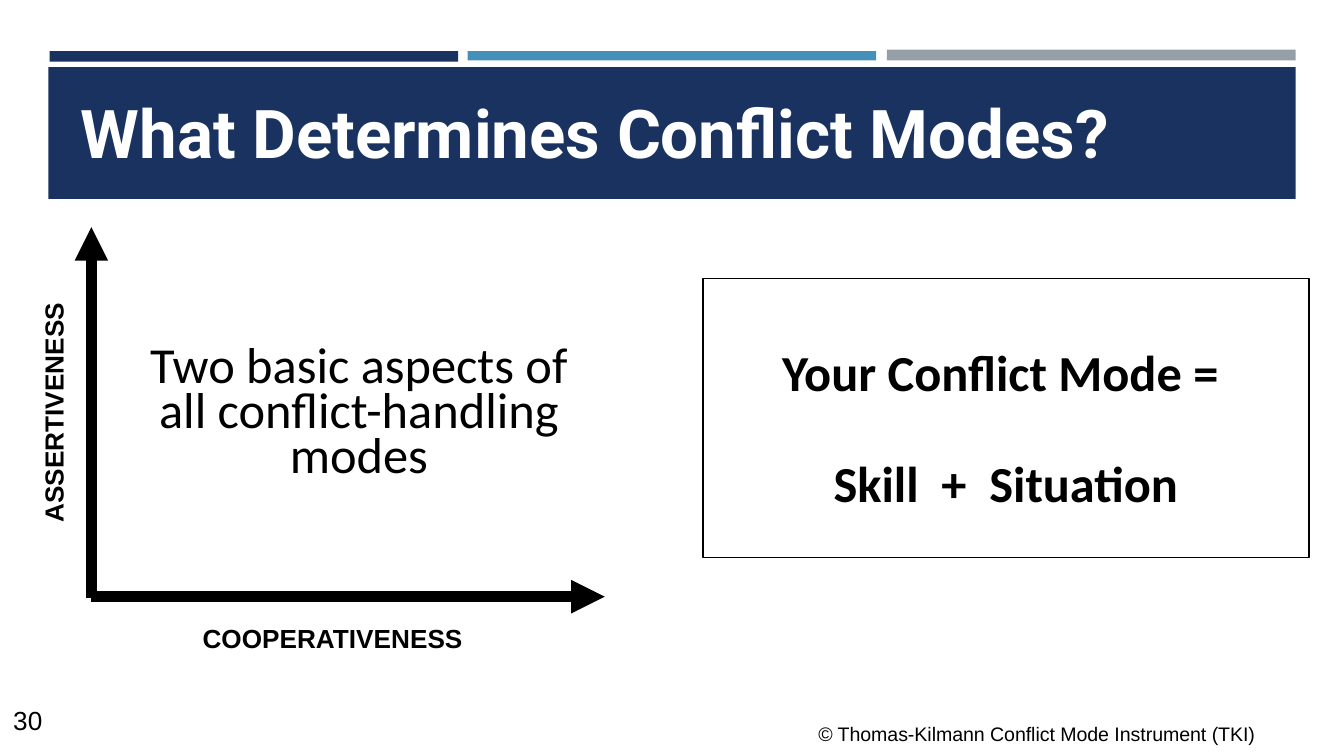
"""Build the slide on what determines conflict modes."""
from lxml.etree import SubElement
from pptx import Presentation
from pptx.dml.color import RGBColor
from pptx.enum.shapes import MSO_CONNECTOR, MSO_SHAPE
from pptx.enum.text import MSO_ANCHOR, MSO_AUTO_SIZE, PP_ALIGN
from pptx.oxml.ns import qn
from pptx.util import Inches, Pt

COLORS = {"navy": "1A3260", "blue": "4590B8", "gray": "969FA7",
          "black": "000000", "white": "FFFFFF"}


def color(name):
    return RGBColor.from_string(COLORS[name])


def write(para, text, size, font, tint="black", bold=False, align=PP_ALIGN.LEFT):
    para.alignment = align
    run = para.add_run()
    run.text = text
    run.font.size = Pt(size)
    run.font.name = font
    run.font.bold = bold
    run.font.color.rgb = color(tint)


deck = Presentation()
deck.slide_width = Inches(10)
deck.slide_height = Inches(10 * 9 / 16)
slide = deck.slides.add_slide(deck.slide_layouts[1])
shapes = slide.shapes
title, body = slide.placeholders

bars = [
    (0.37, 0.38, 3.04, 0.08, "navy"),
    (3.48, 0.38, 3.04, 0.07, "blue"),
    (6.6, 0.37, 3.04, 0.08, "gray"),
    (0.36, 0.5, 9.28, 0.98, "navy"),
]
for left, top, width, height, tint in bars:
    bar = shapes.add_shape(MSO_SHAPE.RECTANGLE, Inches(left), Inches(top),
                           Inches(width), Inches(height))
    bar.shadow.inherit = False
    bar.fill.solid()
    bar.fill.fore_color.rgb = color(tint)
    bar.line.fill.background()

shapes._spTree.append(title._element)
places = [(title, 0.53, 0.66, 9.06, 0.64), (body, 0.52, 2.54, 3.92, 1.05)]
for holder, left, top, width, height in places:
    holder.left, holder.top = Inches(left), Inches(top)
    holder.width, holder.height = Inches(width), Inches(height)
    frame = holder.text_frame
    frame.auto_size = MSO_AUTO_SIZE.NONE
    frame.word_wrap = True
    frame.margin_left = frame.margin_right = Inches(0.07)
    frame.margin_top = frame.margin_bottom = Inches(0.04)

title.text_frame.vertical_anchor = MSO_ANCHOR.MIDDLE
write(title.text_frame.paragraphs[0], "What Determines Conflict Modes?",
      36, "Roboto", "white", True)

body.text_frame.vertical_anchor = MSO_ANCHOR.TOP
para = body.text_frame.paragraphs[0]
props = para._p.get_or_add_pPr()
props.set("marL", str(Inches(0.38)))
props.set("indent", "0")
SubElement(props, qn("a:buNone"))
para.line_spacing = 0.75
para.space_before = Pt(0)
write(para, "Two basic aspects of all conflict-handling modes",
      27, "Calibri", align=PP_ALIGN.CENTER)

box = shapes.add_shape(MSO_SHAPE.RECTANGLE, Inches(5.23), Inches(2.07),
                       Inches(4.51), Inches(2.08))
box.shadow.inherit = False
box.fill.background()
box.line.color.rgb = color("black")
box.line.width = Pt(0.75)
frame = box.text_frame
frame.word_wrap = True
frame.vertical_anchor = MSO_ANCHOR.TOP
frame.margin_top = Inches(0.57)
lines = [("Your Conflict Mode = ", 0), ("Skill  +  Situation", 35.5)]
for i, (text, gap) in enumerate(lines):
    para = frame.add_paragraph() if i else frame.paragraphs[0]
    para.line_spacing = 0.75
    para.space_before = Pt(gap)
    write(para, text, 27, "Calibri", bold=True, align=PP_ALIGN.CENTER)

for left, top, right, end in [(0.68, 4.44, 4.5, 4.44), (0.68, 4.45, 0.68, 1.69)]:
    axis = shapes.add_connector(MSO_CONNECTOR.STRAIGHT, Inches(left), Inches(top),
                                Inches(right), Inches(end))
    axis.line.color.rgb = color("black")
    axis.line.width = Pt(6)
    SubElement(axis.line._get_or_add_ln(), qn("a:tailEnd"), type="triangle")
    SubElement(axis._element.spPr, qn("a:effectLst"))

labels = [
    ("COOPERATIVENESS", 0.74, 4.58, 3.47, 0.34, 0, 14, True, PP_ALIGN.CENTER),
    ("ASSERTIVENESS", -0.6, 2.9, 2, 0.34, 270, 14, True, PP_ALIGN.CENTER),
    ("30", 0, 5.19, 0.62, 0.43, 0, 14, False, PP_ALIGN.LEFT),
    ("© Thomas-Kilmann Conflict Mode Instrument (TKI)",
     5.99, 5.32, 4.35, 0.28, 0, 10.5, False, PP_ALIGN.LEFT),
]
for text, left, top, width, height, turn, size, bold, align in labels:
    label = shapes.add_textbox(Inches(left), Inches(top), Inches(width), Inches(height))
    label.rotation = turn
    label.text_frame.word_wrap = True
    write(label.text_frame.paragraphs[0], text, size, "Arial", bold=bold, align=align)

deck.save("out.pptx")
